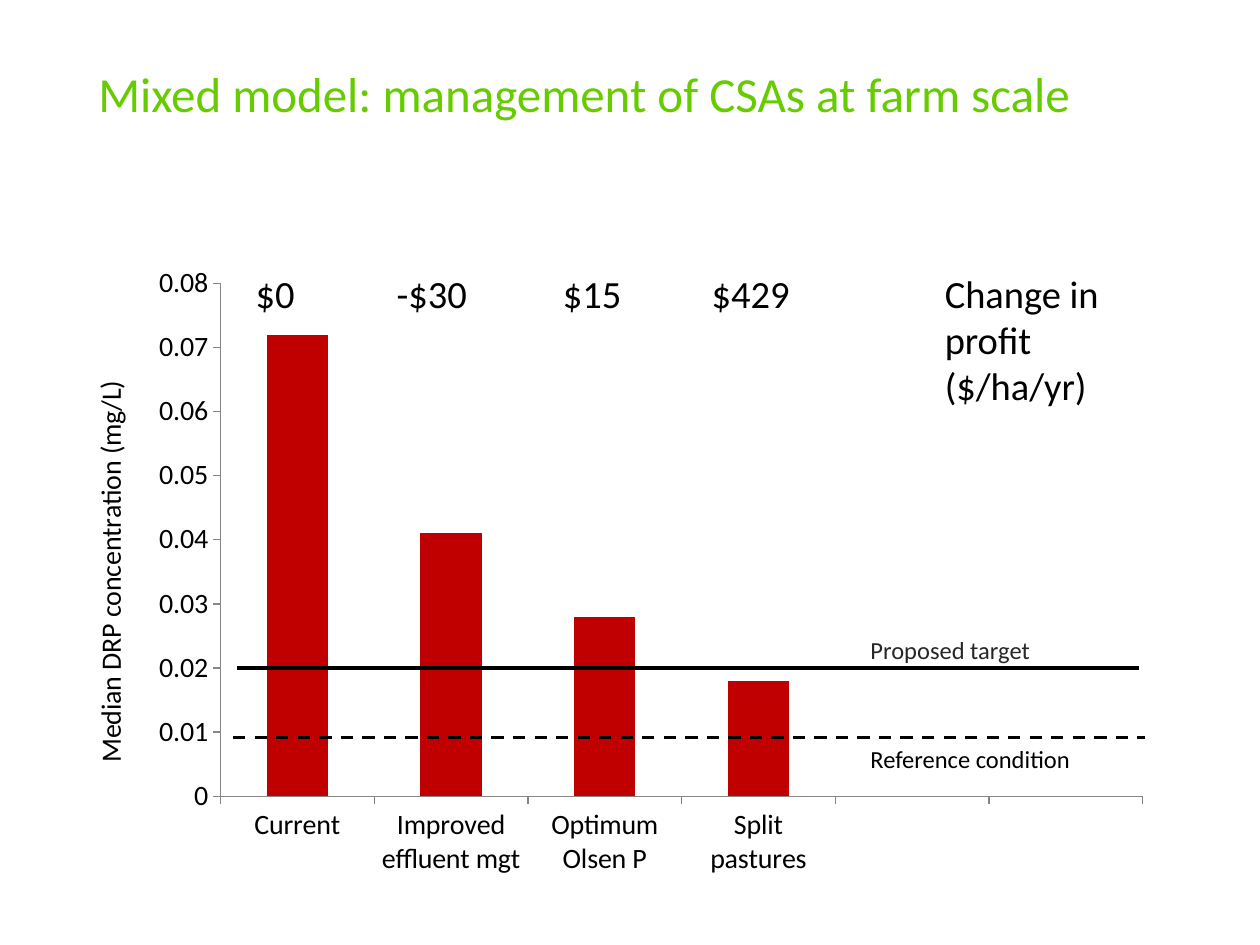
from pptx import Presentation
from pptx.chart.data import CategoryChartData
from pptx.dml.color import RGBColor
from pptx.enum.chart import XL_CHART_TYPE, XL_TICK_MARK
from pptx.enum.dml import MSO_LINE
from pptx.enum.shapes import MSO_CONNECTOR
from pptx.enum.text import MSO_ANCHOR, PP_ALIGN
from pptx.oxml import parse_xml
from pptx.oxml.ns import nsdecls
from pptx.util import Inches, Pt
from lxml.etree import SubElement
from dataclasses import dataclass


@dataclass(frozen=True)
class Theme:
    font: str = "Calibri"
    ink: str = "000000"
    soft: str = "262626"
    title: str = "66CC00"
    bar: str = "C00000"
    axis: str = "868686"
    head: int = 28
    note: int = 22
    tick: int = 16
    label: int = 14


theme = Theme()
TITLE = "Mixed model: management of CSAs at farm scale"
AXIS = "Median DRP concentration (mg/L)"
BARS = [("Current", 0.072), ("Improved effluent mgt", 0.041),
        ("Optimum Olsen P", 0.028), ("Split pastures", 0.018),
        ("", None), ("", None)]
PROFIT = [("$0", 1.93, 0.51), ("-$30", 3.05, 0.76),
          ("$15", 4.37, 0.67), ("$429", 5.55, 0.83)]
LEVELS = [
    ("Reference condition", 0.0092, 1.85, 9.09, 1.75, MSO_LINE.DASH, 0, 1.8, theme.ink),
    ("Proposed target", 0.02, 1.88, 9.04, 2.25, None, -0.31, 1.48, theme.soft),
]
TOP = 0.08
FRAME = (0.51, 2.02, 8.74, 5.04)
PLOT = (1.75, 2.25, 7.32, 4.07)


def color(code):
    return RGBColor.from_string(code)


def style(font, size, ink=theme.ink):
    font.name, font.size, font.bold = theme.font, Pt(size), False
    font.color.rgb = color(ink)


def write(text, box, size=theme.note, ink=theme.ink, wrap=False, shape=None, inset=None):
    shape = shape or slide.shapes.add_textbox(0, 0, 0, 0)
    shape.left, shape.top, shape.width, shape.height = map(Inches, box)
    frame = shape.text_frame
    frame.word_wrap = wrap
    frame.vertical_anchor = MSO_ANCHOR.TOP
    if inset is not None:
        frame.margin_left = frame.margin_right = Inches(inset)
        frame.margin_top = frame.margin_bottom = Inches(inset)
    para = frame.paragraphs[0]
    para.alignment = PP_ALIGN.LEFT
    run = para.add_run()
    run.text = text
    style(run.font, size, ink)


def draw_chart():
    data = CategoryChartData()
    data.categories = [name for name, _ in BARS]
    data.add_series("Series 1", [value for _, value in BARS])
    chart = slide.shapes.add_chart(
        XL_CHART_TYPE.COLUMN_CLUSTERED, *map(Inches, FRAME), data).chart
    style(chart.font, 18)
    chart.has_legend = chart.has_title = False
    plot = chart.plots[0]
    plot.gap_width, plot.vary_by_categories = 150, False
    fill = plot.series[0].format.fill
    fill.solid()
    fill.fore_color.rgb = color(theme.bar)
    for axis in (chart.category_axis, chart.value_axis):
        axis.has_major_gridlines = False
        axis.major_tick_mark = XL_TICK_MARK.OUTSIDE
        axis.minor_tick_mark = XL_TICK_MARK.NONE
        axis.format.line.color.rgb = color(theme.axis)
        style(axis.tick_labels.font, theme.tick)
    axis = chart.value_axis
    axis.minimum_scale, axis.maximum_scale, axis.major_unit = 0, TOP, 0.01
    axis.tick_labels.number_format = "General"
    axis.tick_labels.number_format_is_linked = False
    run = axis.axis_title.text_frame.paragraphs[0].add_run()
    run.text = AXIS
    style(run.font, theme.tick)
    place_plot(chart)


def place_plot(chart):
    shares = ((PLOT[0] - FRAME[0]) / FRAME[2], (PLOT[1] - FRAME[1]) / FRAME[3],
              PLOT[2] / FRAME[2], PLOT[3] / FRAME[3])
    marks = [("layoutTarget", "inner"), ("xMode", "edge"), ("yMode", "edge")]
    marks += zip("xywh", shares)
    body = "".join(f'<c:{tag} val="{val}"/>' for tag, val in marks)
    area = chart._chartSpace.chart.plotArea
    for old in area.findall("{*}layout"):
        area.remove(old)
    area.insert(0, parse_xml(
        f'<c:layout {nsdecls("c")}><c:manualLayout>{body}</c:manualLayout></c:layout>'))


def draw_level(text, value, left, right, weight, dash, shift, width, ink):
    y = PLOT[1] + PLOT[3] * (1 - value / TOP)
    line = slide.shapes.add_connector(
        MSO_CONNECTOR.STRAIGHT, *map(Inches, (left, y, right, y)))
    line.line.color.rgb = color(theme.ink)
    line.line.width = Pt(weight)
    if dash:
        line.line.dash_style = dash
    props = line._element.spPr
    SubElement(props, "{http://schemas.openxmlformats.org/drawingml/2006/main}effectLst")
    write(text, (6.81, y + shift, width, 0.34), size=theme.label, ink=ink)


deck = Presentation()
deck.slide_width, deck.slide_height = Inches(10), Inches(7.5)
slide = deck.slides.add_slide(deck.slide_layouts[5])
write(TITLE, (0.78, 0.5, 8.45, 0.78), size=theme.head, ink=theme.title,
      wrap=True, shape=slide.shapes.title, inset=0)
draw_chart()
for text, left, width in PROFIT:
    write(text, (left, 2.09, width, 0.47))
write("Change in profit ($/ha/yr)", (7.4, 2.09, 1.62, 1.21), wrap=True)
for level in LEVELS:
    draw_level(*level)
deck.save("out.pptx")
